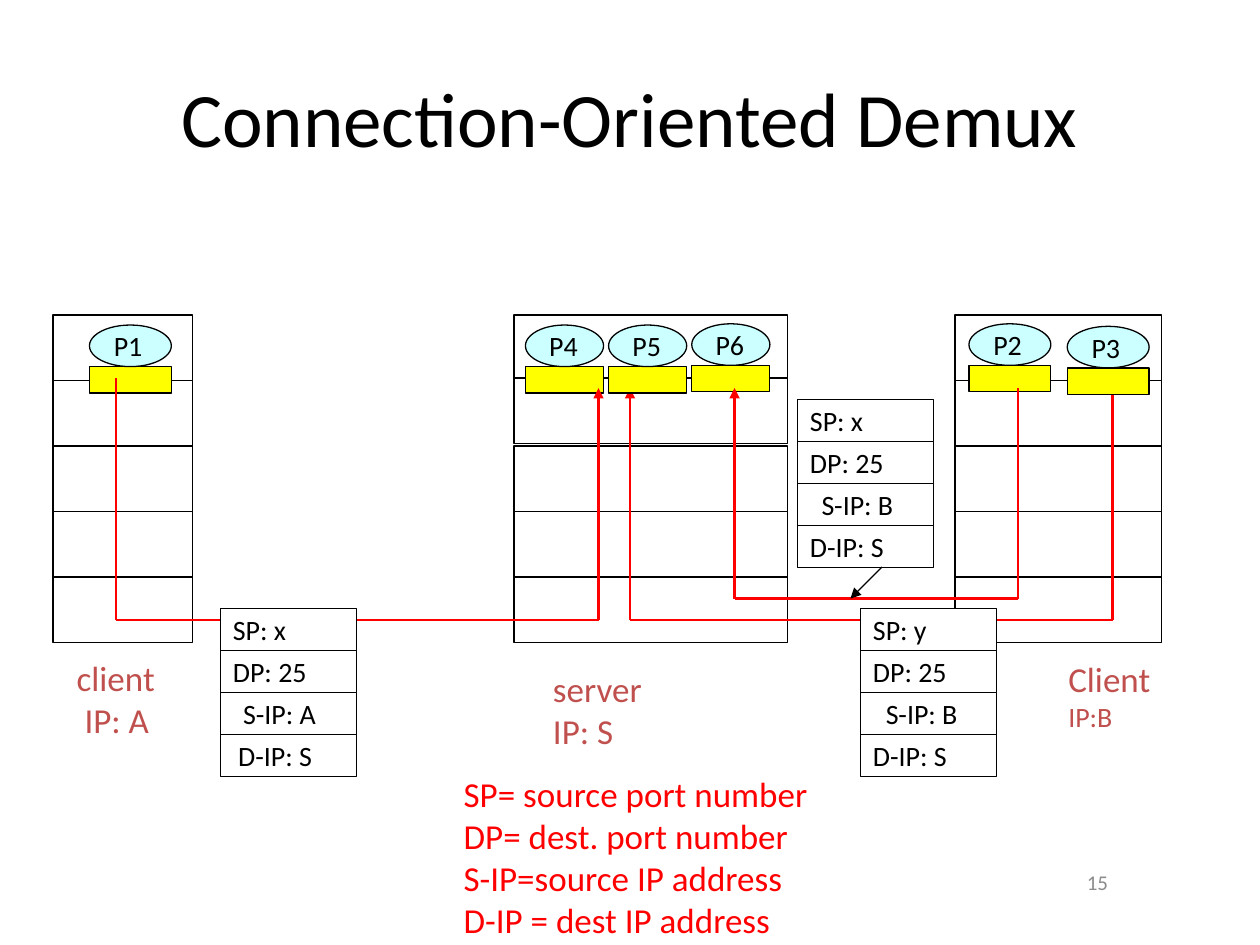
from lxml import etree
from pptx import Presentation
from pptx.dml.color import RGBColor
from pptx.enum.shapes import MSO_CONNECTOR, MSO_SHAPE
from pptx.enum.text import MSO_ANCHOR, MSO_AUTO_SIZE, PP_ALIGN
from pptx.oxml.ns import qn
from pptx.util import Inches, Pt

RECT, OVAL = MSO_SHAPE.RECTANGLE, MSO_SHAPE.OVAL
STRAIGHT = MSO_CONNECTOR.STRAIGHT
MIDDLE, TOP = MSO_ANCHOR.MIDDLE, MSO_ANCHOR.TOP
LEFT, CENTER = PP_ALIGN.LEFT, PP_ALIGN.CENTER
GROW = MSO_AUTO_SIZE.SHAPE_TO_FIT_TEXT

BLACK = RGBColor(0, 0, 0)
WHITE = RGBColor(255, 255, 255)
RED = RGBColor(255, 0, 0)
BRICK = RGBColor(0xC0, 0x50, 0x4D)
YELLOW = RGBColor(255, 255, 0)
CYAN = RGBColor(0xCC, 255, 255)
GRAY = RGBColor(0x8C, 0x8C, 0x8C)
FONT = "Calibri"

TITLE = "Connection-Oriented Demux"
LAYER_H = 0.52
EVEN = [2.5, 3.02, 3.54, 4.06, 4.58]
# left, width, layer tops
HOSTS = [
    (0.42, 1.11, EVEN),
    (7.58, 1.64, EVEN),
    (4.08, 2.17, [2.5, 3, 3.54, 4.06, 4.58]),
]
# name, left, top, width
BACK_PROCS = [("P1", 0.71, 2.58, 0.65), ("P2", 7.69, 2.57, 0.65),
              ("P4", 4.17, 2.58, 0.62)]
FRONT_PROCS = [("P5", 4.83, 2.58, 0.62), ("P6", 5.49, 2.57, 0.62),
               ("P3", 8.47, 2.59, 0.65)]
# client x, client y, bottom y, server x
LOW_WIRES = [(0.92, 3, 4.92, 4.75), (8.83, 3, 4.92, 5)]
HIGH_WIRE = (8.08, 3.08, 4.75, 5.83)
PORT_Y = 3.08
# left, top, (field, text inset) rows
FIELD_W, FIELD_H = 1.08, 1 / 3
SEGMENTS = [
    (1.75, 4.83, [("SP: x", 0.1), ("DP: 25", 0.1),
                  ("S-IP: A", 0.18), ("D-IP: S", 0.14)]),
    (6.83, 4.83, [("SP: y", 0.1), ("DP: 25", 0.1),
                  ("S-IP: B", 0.2), ("D-IP: S", 0.1)]),
    (6.33, 3.17, [("SP: x", 0.1), ("DP: 25", 0.1),
                  ("S-IP: B", 0.19), ("D-IP: S", 0.1)]),
]
# box, (line, size) rows
LABELS = [
    ((0.51, 5.16, 0.95, 0.77), [("client", 20), (" IP: A", 20)]),
    ((4.29, 5.25, 1.05, 0.77), [("server", 20), ("IP: S", 20)]),
    ((8.38, 5.17, 0.95, 0.7), [("Client", 20), ("IP:B", 16)]),
]
LEGEND = ["SP= source port number", "DP= dest. port number",
          "S-IP=source IP address", "D-IP = dest IP address"]

prs = Presentation()
prs.slide_width, prs.slide_height = Inches(10), Inches(7.5)
slide = prs.slides.add_slide(prs.slide_layouts[5])
shapes = slide.shapes


def write(shape, rows, color, align=LEFT, anchor=TOP, inset=0.1, wrap=False):
    """Fill a shape with (text, size) paragraphs."""
    frame = shape.text_frame
    frame.word_wrap = wrap
    frame.vertical_anchor = anchor
    frame.margin_left = Inches(inset)
    for i, (text, size) in enumerate(rows):
        para = frame.add_paragraph() if i else frame.paragraphs[0]
        para.text = text
        para.alignment = align
        para.font.name = FONT
        para.font.size = Pt(size)
        para.font.color.rgb = color


def add_box(kind, box, fill):
    shape = shapes.add_shape(kind, *map(Inches, box))
    shape.shadow.inherit = False
    shape.fill.solid()
    shape.fill.fore_color.rgb = fill
    shape.line.color.rgb = BLACK
    shape.line.width = Pt(0.75)
    return shape


def add_text(box, rows, color, **style):
    shape = shapes.add_textbox(*map(Inches, box))
    write(shape, rows, color, **style)
    return shape


def add_line(start, end, color, width, arrow=False):
    line = shapes.add_connector(STRAIGHT, *map(Inches, start + end))
    line.line.color.rgb = color
    line.line.width = Pt(width)
    if arrow:
        etree.SubElement(line.line._get_or_add_ln(), qn("a:tailEnd"),
                         type="triangle")
    etree.SubElement(line._element.spPr, qn("a:effectLst"))


def add_proc(name, left, top, width):
    """Draw a process with its socket below."""
    add_box(RECT, (left, top + 0.33, width, 0.21), YELLOW)
    oval = add_box(OVAL, (left, top, width, 0.33), CYAN)
    write(oval, [(name, 16)], BLACK, anchor=MIDDLE)


def add_wire(x, y, low, port):
    """Run from a client socket down, across and up to a server port."""
    add_line((x, y), (x, low), RED, 1.5)
    add_line((x, low), (port, low), RED, 1.5)
    add_line((port, low), (port, PORT_Y), RED, 1.5, arrow=True)


title = shapes.title
title.left, title.top, title.width, title.height = map(
    Inches, (0.5, 0.3, 9, 1.25))
write(title, [(TITLE, 44)], BLACK, CENTER, MIDDLE, wrap=True)
add_text((7.67, 6.75, 2.08, 0.5), [("15", 12)], GRAY,
         align=CENTER, anchor=MIDDLE, wrap=True)

for left, width, tops in HOSTS:
    for top in tops:
        add_box(RECT, (left, top, width, LAYER_H), WHITE)
for proc in BACK_PROCS:
    add_proc(*proc)
for wire in LOW_WIRES:
    add_wire(*wire)
for proc in FRONT_PROCS:
    add_proc(*proc)
add_wire(*HIGH_WIRE)

for left, top, fields in SEGMENTS:
    for i, (text, inset) in enumerate(fields):
        cell = add_box(RECT, (left, top + i * FIELD_H, FIELD_W, FIELD_H), WHITE)
        write(cell, [(text, 16)], BLACK, anchor=MIDDLE, inset=inset)
add_line((7, 4.5), (6.75, 4.75), BLACK, 0.75, arrow=True)

for box, rows in LABELS:
    add_text(box, rows, BRICK).text_frame.auto_size = GROW
legend = add_text((3.08, 6.08, 3.46, 1.75), [(text, 20) for text in LEGEND],
                  RED, inset=0.6, wrap=True)
legend.text_frame.auto_size = GROW

prs.save("out.pptx")
